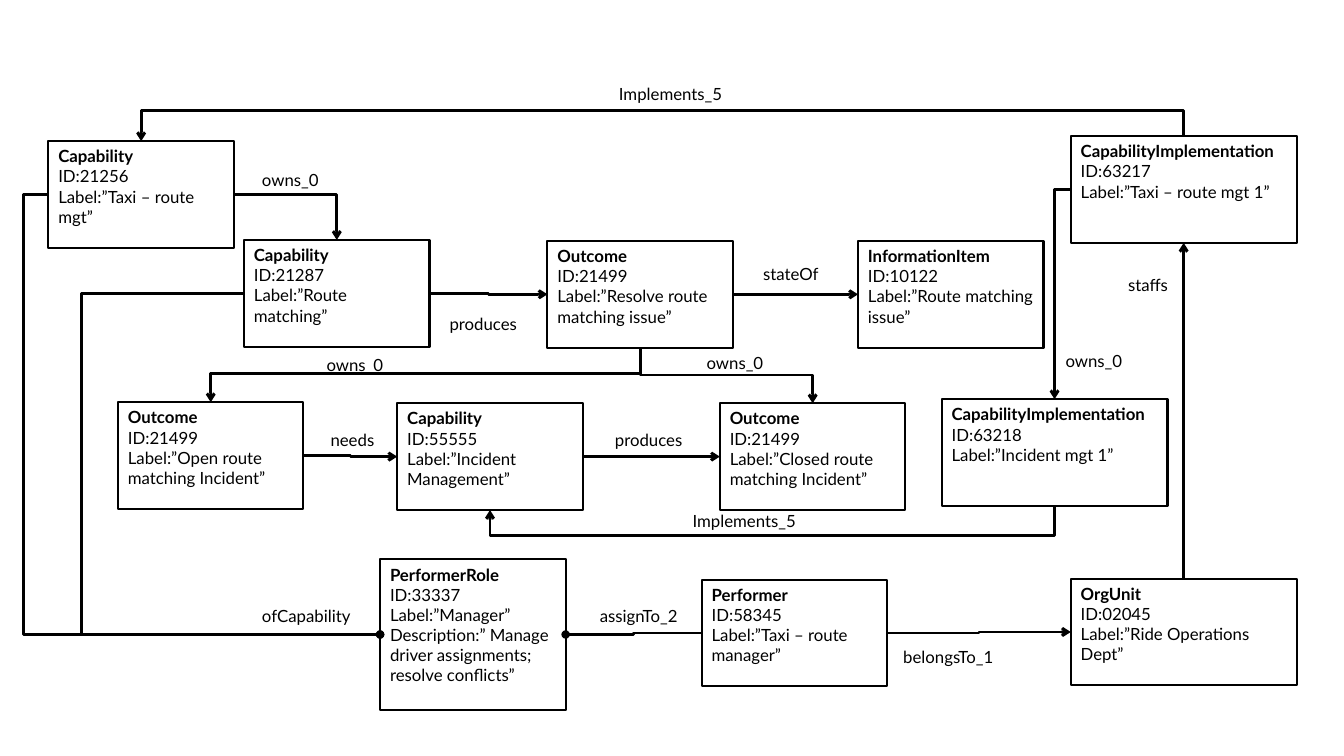
from lxml.etree import SubElement
from pptx import Presentation
from pptx.dml.color import RGBColor
from pptx.enum.shapes import MSO_CONNECTOR as CONNECTOR, MSO_SHAPE as SHAPE
from pptx.enum.text import MSO_ANCHOR as ANCHOR, MSO_AUTO_SIZE as AUTO_SIZE, PP_ALIGN as ALIGN
from pptx.oxml.ns import qn
from pptx.util import Pt

EMU_PER_PX = 9144
BLACK = RGBColor(0, 0, 0)
WHITE = RGBColor(255, 255, 255)
FONT = "Lato"
TOP, LEFT, BOTTOM, RIGHT = range(4)  # connection sites of a rectangle
NARROW, WIDE = 184, 224


def px(length):
    return round(length * EMU_PER_PX)


class Diagram:
    def __init__(self, width, height):
        self.deck = Presentation()
        self.deck.slide_width, self.deck.slide_height = px(width), px(height)
        self.page = self.deck.slides.add_slide(self.deck.slide_layouts[6])

    def set_text(self, frame, lines):
        frame.word_wrap = True
        frame.text = "\n".join(lines)
        for para in frame.paragraphs:
            para.alignment = ALIGN.LEFT
            para.font.name = FONT
            para.font.size = Pt(12)
            para.font.color.rgb = BLACK

    def box(self, left, top, width, kind, *lines, height=106):
        box = self.page.shapes.add_shape(
            SHAPE.RECTANGLE, px(left), px(top), px(width), px(height))
        box.shadow.inherit = False
        box.fill.solid()
        box.fill.fore_color.rgb = WHITE
        box.line.color.rgb = BLACK
        box.line.width = Pt(1.5)
        frame = box.text_frame
        frame.vertical_anchor = ANCHOR.TOP
        self.set_text(frame, [kind, *lines])
        frame.paragraphs[0].font.bold = True
        return box

    def label(self, left, top, text, width=111):
        box = self.page.shapes.add_textbox(px(left), px(top), px(width), px(30))
        self.set_text(box.text_frame, [text])
        box.text_frame.auto_size = AUTO_SIZE.SHAPE_TO_FIT_TEXT

    def link(self, source, source_site, target, target_site, middle=None, end="arrow"):
        """Join two boxes; middle is the x or y of the elbow's middle segment."""
        line = self.page.shapes.add_connector(CONNECTOR.ELBOW, 0, 0, 0, 0)
        line.begin_connect(source, source_site)
        line.end_connect(target, target_site)
        line.line.color.rgb = BLACK
        line.line.width = Pt(2)
        self.route(line, source_site, target_site, middle)
        properties = line._element.spPr
        SubElement(properties.find(qn("a:ln")), qn("a:tailEnd"), type=end)
        SubElement(properties, qn("a:effectLst"))

    def route(self, line, source_site, target_site, middle):
        """Set the preset, rotation, flips and adjustment of an elbow."""
        x, y = line.begin_x, line.begin_y
        dx, dy = line.end_x - x, line.end_y - y
        xfrm = line._element.spPr.find(qn("a:xfrm"))
        geometry = line._element.spPr.find(qn("a:prstGeom"))
        upright = source_site in (TOP, BOTTOM)
        start, run = (y, dy) if upright else (x, dx)
        if upright and dx == 0:
            geometry.set("prst", "line")
            return
        if upright:
            # A quarter turn: the frame lies on its side around the same centre.
            line.width, line.height = abs(dy), abs(dx)
            line.left = x + (dx - abs(dy)) // 2
            line.top = y + (dy - abs(dx)) // 2
            xfrm.set("rot", "5400000")
            xfrm.set("flipH", str(int(dy < 0)))
            xfrm.set("flipV", str(int(dx > 0)))
        if upright != (target_site in (TOP, BOTTOM)):
            geometry.set("prst", "bentConnector2")
        elif middle is not None:
            share = round((px(middle) - start) / run * 100000)
            SubElement(geometry.find(qn("a:avLst")), qn("a:gd"),
                       name="adj1", fmla=f"val {share}")


def main():
    diagram = Diagram(1333, 750)
    box, link = diagram.box, diagram.link

    taxi = box(48, 140, NARROW, "Capability", "ID:21256", "Label:”Taxi – route mgt”")
    taxi_impl = box(1062, 135, WIDE, "CapabilityImplementation", "ID:63217",
                    "Label:”Taxi – route mgt 1”")
    matching = box(242, 238, NARROW, "Capability", "ID:21287", "Label:”Route matching”")
    resolved = box(543, 239, NARROW, "Outcome", "ID:21499",
                   "Label:”Resolve route matching issue”")
    issue = box(851, 239, NARROW, "InformationItem", "ID:10122",
                "Label:”Route matching issue”")
    opened = box(117, 399, NARROW, "Outcome", "ID:21499",
                 "Label:”Open route matching Incident”")
    incident = box(394, 400, NARROW, "Capability", "ID:55555",
                   "Label:”Incident Management”")
    closed = box(714, 400, NARROW, "Outcome", "ID:21499",
                 "Label:”Closed route matching Incident”")
    incident_impl = box(934, 396, WIDE, "CapabilityImplementation", "ID:63218",
                        "Label:”Incident mgt 1”")
    role = box(377, 555, NARROW, "PerformerRole", "ID:33337", "Label:”Manager”",
               "Description:” Manage driver assignments; resolve conflicts”", height=149)
    performer = box(696, 575, NARROW, "Performer", "ID:58345",
                    "Label:”Taxi – route manager”")
    unit = box(1062, 574, WIDE, "OrgUnit", "ID:02045", "Label:”Ride Operations Dept”")

    link(taxi_impl, TOP, taxi, TOP, 110)
    link(incident_impl, BOTTOM, incident, BOTTOM, 531)
    link(unit, TOP, taxi_impl, BOTTOM)
    link(taxi, RIGHT, matching, TOP)
    link(taxi_impl, LEFT, incident_impl, TOP)
    link(resolved, BOTTOM, opened, TOP, 371)
    link(resolved, BOTTOM, closed, TOP, 372)
    for source, target in ((matching, resolved), (resolved, issue), (opened, incident),
                           (incident, closed), (performer, unit)):
        link(source, RIGHT, target, LEFT)
    link(taxi, LEFT, role, LEFT, 23, end="oval")
    link(matching, LEFT, role, LEFT, 81, end="oval")
    link(performer, LEFT, role, RIGHT, end="oval")

    for left, top, text in (
        (250, 163, "owns_0"), (314, 347, "owns_0"), (691, 345, "owns_0"),
        (1047, 343, "owns_0"), (436, 306, "produces"), (600, 421, "produces"),
        (747, 257, "stateOf"), (318, 421, "needs"), (250, 596, "ofCapability"),
        (585, 596, "assignTo_2"), (886, 637, "belongsTo_1"), (1109, 268, "staffs"),
    ):
        diagram.label(left, top, text)
    for left, top in ((604, 78), (677, 502)):
        diagram.label(left, top, "Implements_5", width=125)

    diagram.deck.save("out.pptx")


if __name__ == "__main__":
    main()
